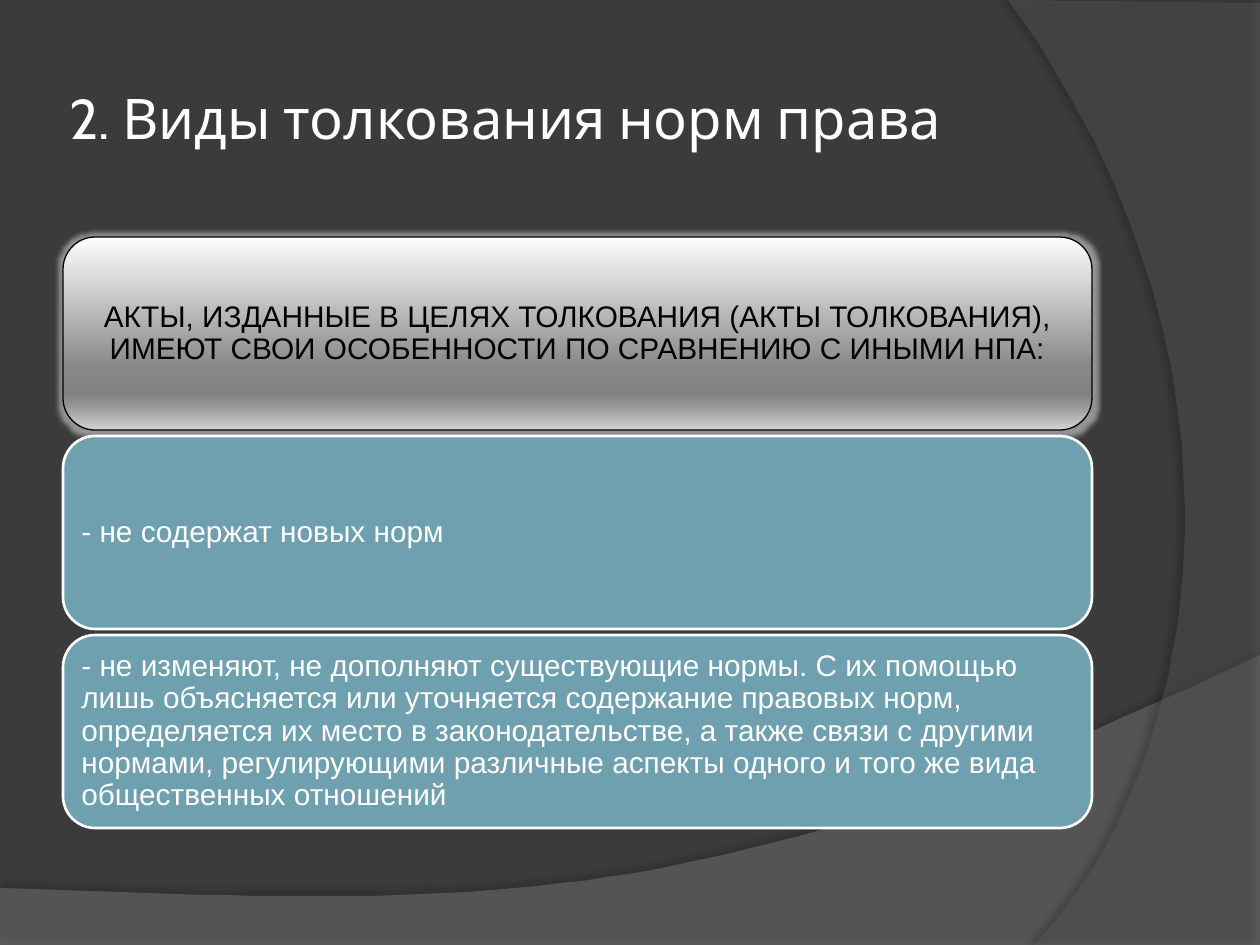
from lxml import etree
from pptx import Presentation
from pptx.dml.color import RGBColor
from pptx.enum.shapes import MSO_SHAPE
from pptx.enum.text import MSO_ANCHOR, MSO_AUTO_SIZE, PP_ALIGN
from pptx.oxml.ns import qn
from pptx.util import Pt

ROUNDED = MSO_SHAPE.ROUNDED_RECTANGLE
MIDDLE = MSO_ANCHOR.MIDDLE
NO_AUTOFIT = MSO_AUTO_SIZE.NONE
LEFT, CENTER = PP_ALIGN.LEFT, PP_ALIGN.CENTER

PX = 914400 / 126
TITLE_ONLY = 5
WHITE, BLACK, TEAL = "FFFFFF", "000000", "6EA0B0"
SILVER = [(0, "FEFEFE"), (68, "878787"), (81, "818181"), (86, "909090"), (100, "D3D3D3")]

CARD_LEFT, CARD_TOP, CARD_WIDTH, CARD_HEIGHT, CARD_GAP = 63, 237, 1029, 193, 6
HEADING = ("АКТЫ, ИЗДАННЫЕ В ЦЕЛЯХ ТОЛКОВАНИЯ (АКТЫ ТОЛКОВАНИЯ), "
           "ИМЕЮТ СВОИ ОСОБЕННОСТИ ПО СРАВНЕНИЮ С ИНЫМИ НПА:")
FEATURES = [
    "- не содержат новых норм",
    "- не изменяют, не дополняют существующие нормы. С их помощью лишь объясняется "
    "или уточняется содержание правовых норм, определяется их место в законодательстве, "
    "а также связи с другими нормами, регулирующими различные аспекты одного и того же "
    "вида общественных отношений",
]


def px(length):
    return round(length * PX)


def rgb(value):
    return RGBColor.from_string(value)


def add_color(parent, value, alpha=100):
    color = etree.SubElement(parent, qn("a:srgbClr"), val=value)
    if alpha < 100:
        etree.SubElement(color, qn("a:alpha"), val=str(alpha * 1000))


def bezier(start, control1, control2, end, steps=48):
    points = []
    for step in range(steps + 1):
        t = step / steps
        weights = ((1 - t) ** 3, 3 * t * (1 - t) ** 2, 3 * t * t * (1 - t), t ** 3)
        points.append(tuple(
            sum(w * p for w, p in zip(weights, axis))
            for axis in zip(start, control1, control2, end)
        ))
    return points


class SlideBuilder:
    """Draws the elements of one slide in a shared style."""

    def __init__(self, slide, title_font, body_font):
        self.slide = slide
        self.title_font = title_font
        self.body_font = body_font

    def background(self, color):
        fill = self.slide.background.fill
        fill.solid()
        fill.fore_color.rgb = rgb(color)

    def set_text(self, shape, text, font, size, color, align, margin):
        frame = shape.text_frame
        frame.text = text
        frame.word_wrap = True
        frame.auto_size = NO_AUTOFIT
        frame.vertical_anchor = MIDDLE
        frame.margin_left = frame.margin_right = px(margin)
        frame.margin_top = frame.margin_bottom = px(margin)
        paragraph = frame.paragraphs[0]
        paragraph.alignment = align
        run_font = paragraph.runs[0].font
        run_font.name, run_font.size = font, Pt(size)
        run_font.color.rgb = rgb(color)
        return paragraph

    def title(self, text, left, top, width, height):
        title = self.slide.shapes.title
        title.left, title.top = px(left), px(top)
        title.width, title.height = px(width), px(height)
        self.set_text(title, text, self.title_font, 32, WHITE, LEFT, 6)

    def effect(self, shape, kind, color, alpha, **settings):
        shape.shadow.inherit = False
        effects = shape.element.spPr.find(qn("a:effectLst"))
        values = {name: str(value) for name, value in settings.items()}
        add_color(etree.SubElement(effects, qn(kind), values), color, alpha)

    def swoosh(self, points, color, opacity, shadow_opacity, distance, direction):
        outline = self.slide.shapes.build_freeform(*points[0], scale=PX)
        outline.add_line_segments(points[1:], close=True)
        shape = outline.convert_to_shape()
        shape.fill.solid()
        shape.fill.fore_color.rgb = rgb(color)
        swatch = shape.element.spPr.find(qn("a:solidFill"))[0]
        etree.SubElement(swatch, qn("a:alpha"), val=str(opacity * 1000))
        shape.line.fill.background()
        self.effect(shape, "a:outerShdw", BLACK, shadow_opacity, blurRad=Pt(4),
                    dist=Pt(distance), dir=direction * 60000, rotWithShape=0)

    def card(self, row, text, text_color, line_color, line_width, align=LEFT):
        top = CARD_TOP + row * (CARD_HEIGHT + CARD_GAP)
        card = self.slide.shapes.add_shape(
            ROUNDED, px(CARD_LEFT), px(top), px(CARD_WIDTH), px(CARD_HEIGHT))
        card.shadow.inherit = False
        card.fill.solid()
        card.fill.fore_color.rgb = rgb(TEAL)
        card.line.color.rgb = rgb(line_color)
        card.line.width = Pt(line_width)
        paragraph = self.set_text(card, text, self.body_font, 17, text_color, align, 9)
        paragraph.line_spacing = 0.9
        return card

    def heading_card(self, row, text):
        card = self.card(row, text, BLACK, BLACK, 0.75, CENTER)
        card.fill.gradient()
        card.fill.gradient_angle = 270
        stops = card.element.spPr.find(qn("a:gradFill")).find(qn("a:gsLst"))
        for stop in list(stops):
            stops.remove(stop)
        for position, color in SILVER:
            add_color(etree.SubElement(stops, qn("a:gs"), pos=str(position * 1000)), color)
        self.effect(card, "a:glow", WHITE, 45, rad=Pt(5))


def main():
    presentation = Presentation()
    presentation.slide_width, presentation.slide_height = px(1260), px(945)
    slide = presentation.slides.add_slide(presentation.slide_layouts[TITLE_ONLY])
    builder = SlideBuilder(slide, "Cabin", "Arial")
    builder.background("3B3B3B")

    wave = bezier((1260, 655), (704, 919), (493, 906), (0, 888))
    builder.swoosh([(0, 946), (1260, 946)] + wave, "7F7F7F", 45, 35, 3.5, 270)
    arc = bezier((1034, 945), (1194, 780), (1283, 378), (1008, 0))
    builder.swoosh([(1260, 3), (1260, 945)] + arc, "5E5E5E", 40, 45, 4, 180)

    builder.title("2. Виды толкования норм права", CARD_LEFT, 38, CARD_WIDTH, 158)
    builder.heading_card(0, HEADING)
    for row, feature in enumerate(FEATURES, start=1):
        builder.card(row, feature, WHITE, WHITE, 1.5)
    presentation.save("out.pptx")


if __name__ == "__main__":
    main()
